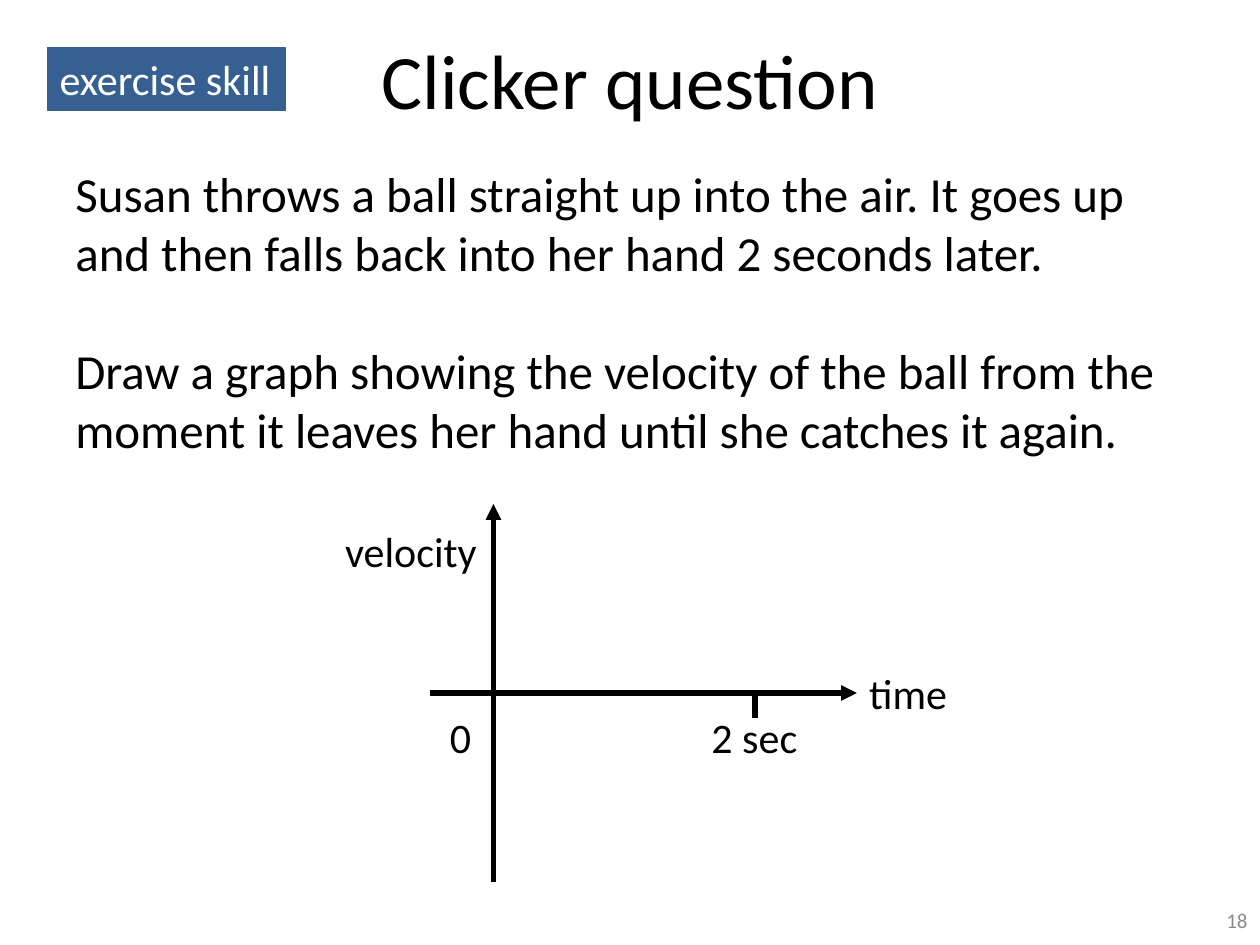
from dataclasses import dataclass

from lxml import etree
from pptx import Presentation
from pptx.dml.color import RGBColor
from pptx.enum.shapes import MSO_CONNECTOR, MSO_SHAPE
from pptx.enum.text import MSO_ANCHOR, PP_ALIGN
from pptx.oxml.ns import qn
from pptx.util import Pt

LEFT, CENTER, RIGHT = PP_ALIGN.LEFT, PP_ALIGN.CENTER, PP_ALIGN.RIGHT
TOP, MIDDLE = MSO_ANCHOR.TOP, MSO_ANCHOR.MIDDLE
RECTANGLE, STRAIGHT = MSO_SHAPE.RECTANGLE, MSO_CONNECTOR.STRAIGHT
FONT = "Calibri"
COLORS = {"ink": "000000", "number": "8C8C8C", "badge": "376092", "badge_text": "FFFFFF"}
LABEL_SIZE, LABEL_HEIGHT = 24, 36
ORIGIN_X, AXIS_Y = 282, 396
TICK_X, TICK_LENGTH = 431.5, 14.4
TICK_LABEL_Y = 403


@dataclass
class Text:
    paragraphs: list[str]
    x: float
    y: float
    w: float
    h: float = LABEL_HEIGHT
    size: float = LABEL_SIZE
    color: str = "ink"
    align: PP_ALIGN = LEFT
    anchor: MSO_ANCHOR = TOP
    wrap: bool = False
    gap: float = 0


@dataclass
class Line:
    x1: float
    y1: float
    x2: float
    y2: float
    arrow: bool = True


def rgb(name: str) -> RGBColor:
    return RGBColor.from_string(COLORS[name])


def write_text(sp, text: Text) -> None:
    tf = sp.text_frame
    tf.word_wrap = text.wrap
    tf.vertical_anchor = text.anchor
    for i, content in enumerate(text.paragraphs):
        p = tf.add_paragraph() if i else tf.paragraphs[0]
        p.alignment = text.align
        if i:
            p.space_before = Pt(text.gap)
        r = p.add_run()
        r.text = content
        r.font.name = FONT
        r.font.size = Pt(text.size)
        r.font.color.rgb = rgb(text.color)


def add_text(s, text: Text):
    sp = s.shapes.add_textbox(Pt(text.x), Pt(text.y), Pt(text.w), Pt(text.h))
    write_text(sp, text)
    return sp


def add_badge(s, text: Text) -> None:
    sp = s.shapes.add_shape(RECTANGLE, Pt(text.x), Pt(text.y), Pt(text.w), Pt(text.h))
    sp.shadow.inherit = False
    sp.fill.solid()
    sp.fill.fore_color.rgb = rgb("badge")
    sp.line.color.rgb = rgb("badge")
    sp.line.width = Pt(0.75)
    write_text(sp, text)


def add_line(s, line: Line):
    cxn = s.shapes.add_connector(STRAIGHT, Pt(line.x1), Pt(line.y1), Pt(line.x2), Pt(line.y2))
    cxn.line.color.rgb = rgb("ink")
    cxn.line.width = Pt(3)
    if line.arrow:
        etree.SubElement(cxn.line._get_or_add_ln(), qn("a:tailEnd"), type="triangle")
    etree.SubElement(cxn._element.spPr, qn("a:effectLst"))
    return cxn


def main() -> None:
    prs = Presentation()
    prs.slide_width, prs.slide_height = Pt(720), Pt(540)
    s = prs.slides.add_slide(prs.slide_layouts[6])

    add_text(s, Text(["Clicker question"], 36, 0, 648, 90, 44,
                     align=CENTER, anchor=MIDDLE, wrap=True))
    add_text(s, Text([
        "Susan throws a ball straight up into the air. It goes up and then falls "
        "back into her hand 2 seconds later.",
        "Draw a graph showing the velocity of the ball from the moment it leaves "
        "her hand until she catches it again.",
    ], 36, 90, 648, 396, 28, wrap=True, gap=34))
    add_text(s, Text(["18"], 552, 511, 168, 29, 12, "number", RIGHT, MIDDLE, True))

    time_axis = add_line(s, Line(246, AXIS_Y, 489.6, AXIS_Y))
    time_label = add_text(s, Text(["time"], 489.6, AXIS_Y - LABEL_HEIGHT / 2, 60))
    time_axis.end_connect(time_label, 1)
    add_line(s, Line(ORIGIN_X, 504, ORIGIN_X, 288))
    add_text(s, Text(["velocity"], 189, 297, 90.5, align=RIGHT))
    add_line(s, Line(TICK_X, AXIS_Y, TICK_X, AXIS_Y + TICK_LENGTH, arrow=False))
    add_text(s, Text(["2 sec"], 399.5, TICK_LABEL_Y, 64))
    add_text(s, Text(["0"], 250, TICK_LABEL_Y, 26.5))
    add_badge(s, Text(["exercise skill"], 27, 27, 136, color="badge_text"))

    prs.save("out.pptx")


if __name__ == "__main__":
    main()
